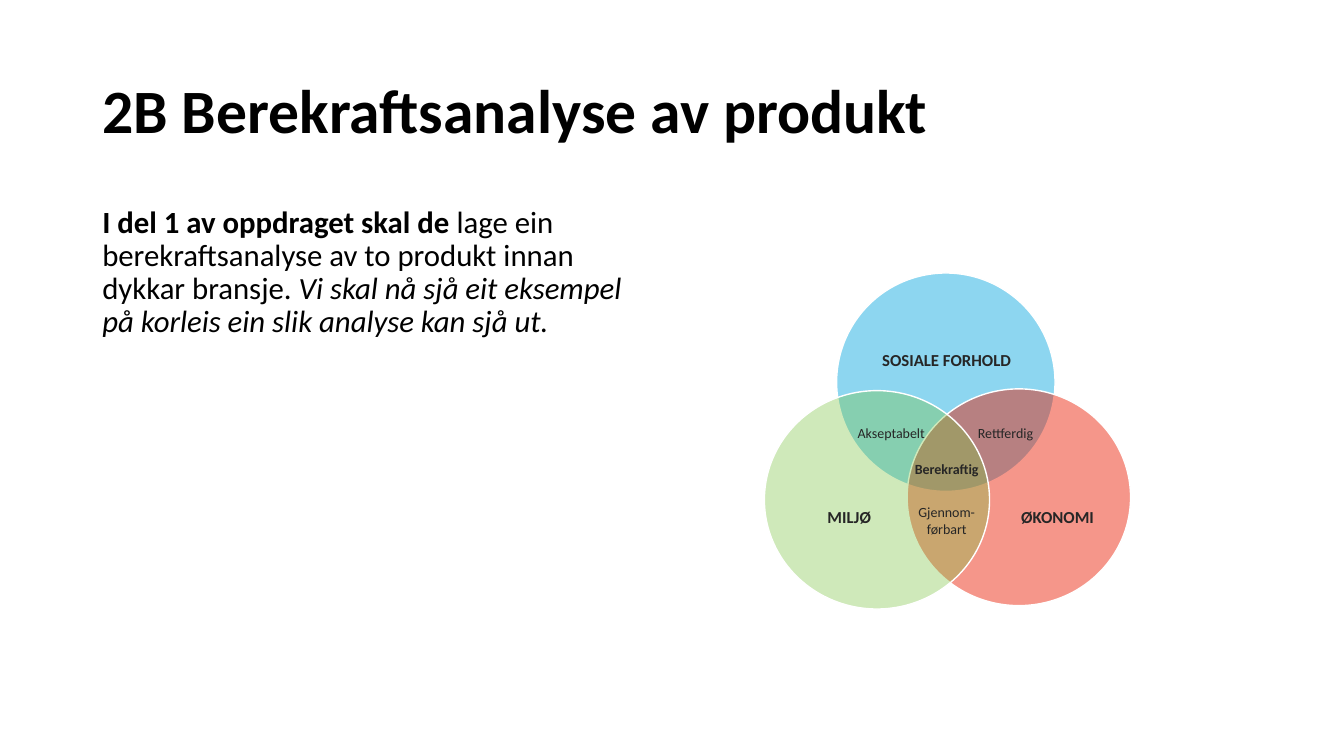
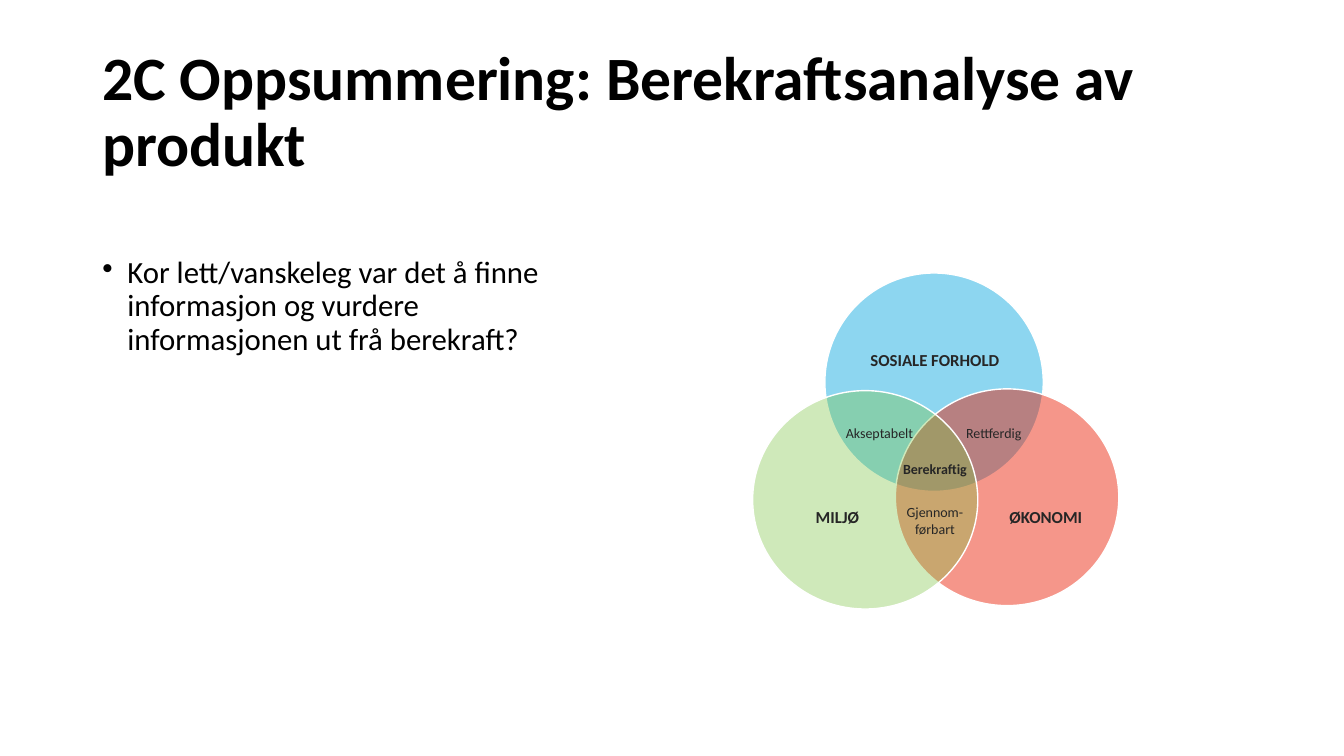
from dataclasses import dataclass

from lxml import etree
from pptx import Presentation
from pptx.dml.color import RGBColor
from pptx.enum.shapes import MSO_SHAPE
from pptx.enum.text import MSO_ANCHOR, MSO_AUTO_SIZE, PP_ALIGN
from pptx.oxml.ns import qn
from pptx.util import Inches, Pt

OVAL = MSO_SHAPE.OVAL
MIDDLE, TOP = MSO_ANCHOR.MIDDLE, MSO_ANCHOR.TOP
CENTER = PP_ALIGN.CENTER
FIT_SHAPE = MSO_AUTO_SIZE.SHAPE_TO_FIT_TEXT
BLANK_LAYOUT = 6

SLIDE_WIDTH, SLIDE_HEIGHT = Inches(13.333), Inches(7.5)
COLUMNS, ROWS = 160, 90


@dataclass(frozen=True)
class Theme:
    font: str = "Calibri"
    text: str = "000000"
    label: str = "262626"
    outline: str = "FFFFFF"
    social: str = "1DAFE3"
    economy: str = "EA1C00"
    environment: str = "7CC341"
    title_size: int = 44
    body_size: int = 22
    circle_label_size: int = 12
    overlap_label_size: int = 10
    outline_width: int = 1
    line_spacing: float = 0.9
    bullet_indent: float = 0.25


THEME = Theme()


@dataclass(frozen=True)
class Box:
    """A place on the slide grid, in columns and rows."""
    left: float
    top: float
    width: float
    height: float

    def moved(self, columns: float, rows: float) -> "Box":
        return Box(self.left + columns, self.top + rows, self.width, self.height)

    def lengths(self) -> tuple[int, int, int, int]:
        column, row = SLIDE_WIDTH / COLUMNS, SLIDE_HEIGHT / ROWS
        return (round(self.left * column), round(self.top * row),
                round(self.width * column), round(self.height * row))


@dataclass(frozen=True)
class Circle:
    box: Box
    color: str
    opacity: int


@dataclass(frozen=True)
class Label:
    text: str
    center: float
    top: float
    width: float
    height: float
    size: int
    bold: bool = False


@dataclass(frozen=True)
class Run:
    text: str
    bold: bool = False
    italic: bool = False


@dataclass(frozen=True)
class Page:
    title: str
    title_width: float
    body: tuple[Run, ...]
    body_box: Box
    diagram_left: float
    bulleted: bool = False


MARGIN = 11
TITLE_TOP, TITLE_HEIGHT = 4.8, 17.4
DIAGRAM_TOP = 32.5

# Diagram parts are placed relative to the diagram's top left corner.
CIRCLES = (
    Circle(Box(8.6, 0, 26, 26), THEME.social, 50),
    Circle(Box(17, 13.8, 26.6, 25.8), THEME.economy, 46),
    Circle(Box(0, 14, 26.8, 26), THEME.environment, 36),
)


def circle_label(text: str, center: float, top: float, width: float) -> Label:
    return Label(text, center, top, width, 3.6, THEME.circle_label_size, True)


def overlap_label(text: str, center: float, top: float,
                  height: float = 3.2, bold: bool = False) -> Label:
    return Label(text, center, top, 10.9, height, THEME.overlap_label_size, bold)


LABELS = (
    overlap_label("Akseptabelt", 15.1, 17.5),
    circle_label("SOSIALE FORHOLD", 21.7, 8.5, 26.4),
    circle_label("MILJØ", 10.1, 27.2, 17.4),
    circle_label("ØKONOMI", 34.9, 27.2, 14.8),
    overlap_label("Rettferdig", 28.7, 17.5),
    overlap_label("Gjennom-\nførbart", 21.7, 26.9, height=5.3),
    overlap_label("Berekraftig", 21.7, 21.7, bold=True),
)

PAGES = (
    Page(
        "2B Berekraftsanalyse av produkt", 138,
        (
            Run("I del 1 av oppdraget skal de ", bold=True),
            Run("lage ein berekraftsanalyse av to produkt innan dykkar bransje. "),
            Run("Vi skal nå sjå eit eksempel på korleis ein slik analyse kan sjå ut.",
                italic=True),
        ),
        Box(MARGIN, 24, 65.6, 57), diagram_left=91,
    ),
    Page(
        "2C Oppsummering: Berekraftsanalyse av produkt", 144.6,
        (Run("Kor lett/vanskeleg var det å finne informasjon og vurdere "
             "informasjonen ut frå berekraft?"),),
        Box(MARGIN, 30, 59, 51), diagram_left=89.6, bulleted=True,
    ),
)


def add_text_box(shapes, box: Box, size: int, color: str, anchor=TOP):
    """Add a wrapping text box and return its text frame."""
    frame = shapes.add_textbox(*box.lengths()).text_frame
    frame.word_wrap = True
    frame.vertical_anchor = anchor
    font = frame.paragraphs[0].font
    font.name, font.size = THEME.font, Pt(size)
    font.color.rgb = RGBColor.from_string(color)
    return frame


def add_title(slide, page: Page) -> None:
    box = Box(MARGIN, TITLE_TOP, page.title_width, TITLE_HEIGHT)
    frame = add_text_box(slide.shapes, box, THEME.title_size, THEME.text, MIDDLE)
    paragraph = frame.paragraphs[0]
    paragraph.text = page.title
    paragraph.font.bold = True
    paragraph.line_spacing = THEME.line_spacing


def add_bullet(paragraph) -> None:
    properties = paragraph._p.get_or_add_pPr()
    indent = Inches(THEME.bullet_indent)
    properties.set("marL", str(indent))
    properties.set("indent", str(-indent))
    bullet = etree.Element(qn("a:buChar"), char="•")
    properties.find(qn("a:defRPr")).addprevious(bullet)


def add_body(slide, page: Page) -> None:
    frame = add_text_box(slide.shapes, page.body_box, THEME.body_size, THEME.text)
    paragraph = frame.paragraphs[0]
    paragraph.line_spacing = THEME.line_spacing
    for part in page.body:
        run = paragraph.add_run()
        run.text = part.text
        run.font.bold, run.font.italic = part.bold, part.italic
    if page.bulleted:
        add_bullet(paragraph)


def add_circle(shapes, circle: Circle, left: float) -> None:
    shape = shapes.add_shape(OVAL, *circle.box.moved(left, DIAGRAM_TOP).lengths())
    shape.shadow.inherit = False
    shape.fill.solid()
    shape.fill.fore_color.rgb = RGBColor.from_string(circle.color)
    fill_color = shape._element.spPr.find(qn("a:solidFill"))[0]
    etree.SubElement(fill_color, qn("a:alpha"), val=str(circle.opacity * 1000))
    shape.line.color.rgb = RGBColor.from_string(THEME.outline)
    shape.line.width = Pt(THEME.outline_width)


def add_label(shapes, label: Label, left: float) -> None:
    box = Box(label.center - label.width / 2, label.top, label.width, label.height)
    frame = add_text_box(shapes, box.moved(left, DIAGRAM_TOP), label.size, THEME.label)
    frame.auto_size = FIT_SHAPE
    paragraph = frame.paragraphs[0]
    paragraph.text = label.text
    paragraph.alignment = CENTER
    paragraph.font.bold = label.bold


def add_diagram(slide, left: float) -> None:
    shapes = slide.shapes.add_group_shape().shapes
    for circle in CIRCLES:
        add_circle(shapes, circle, left)
    for label in LABELS:
        add_label(shapes, label, left)


def main() -> None:
    presentation = Presentation()
    presentation.slide_width, presentation.slide_height = SLIDE_WIDTH, SLIDE_HEIGHT
    for page in PAGES:
        slide = presentation.slides.add_slide(presentation.slide_layouts[BLANK_LAYOUT])
        add_title(slide, page)
        add_body(slide, page)
        add_diagram(slide, page.diagram_left)
    presentation.save("out.pptx")


if __name__ == "__main__":
    main()
